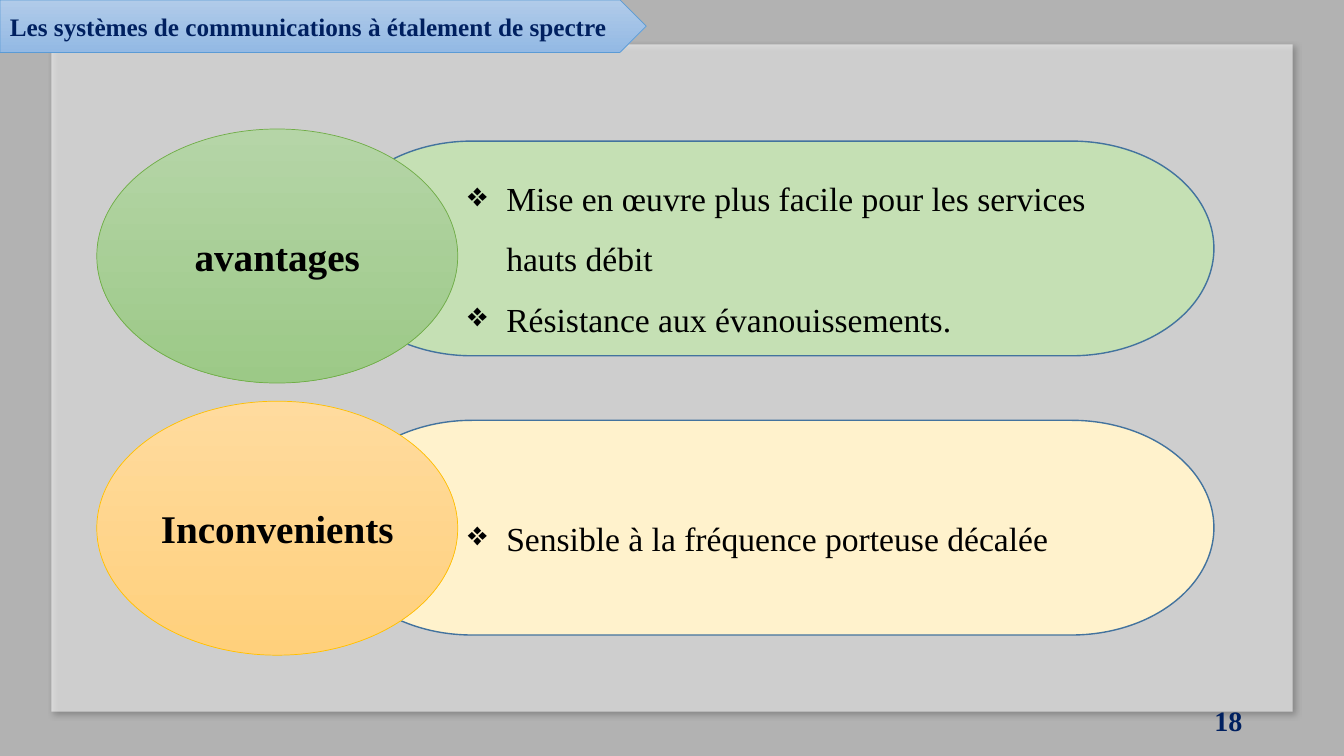
"""Build the slide on advantages and drawbacks of spread-spectrum systems."""
from lxml.etree import SubElement
from pptx import Presentation
from pptx.dml.color import RGBColor
from pptx.enum.shapes import MSO_SHAPE
from pptx.enum.text import MSO_ANCHOR, PP_ALIGN
from pptx.oxml.ns import qn
from pptx.util import Inches, Pt

FONT = "Times New Roman"
BLACK = RGBColor(0, 0, 0)
WHITE = RGBColor(0xFF, 0xFF, 0xFF)
NAVY = RGBColor(0x00, 0x20, 0x60)
BLUE = RGBColor(0x5B, 0x9B, 0xD5)
BLUE_FADE = RGBColor(0xB1, 0xCB, 0xE9), RGBColor(0x93, 0xB9, 0xE4)
STEEL = RGBColor(0x43, 0x73, 0x9E)
GREEN = RGBColor(0x70, 0xAD, 0x47)
GREEN_FADE = RGBColor(0xB5, 0xD5, 0xA7), RGBColor(0x9C, 0xC9, 0x87)
PALE_GREEN = RGBColor(0xC5, 0xE0, 0xB4)
GOLD = RGBColor(0xFF, 0xC0, 0x00)
GOLD_FADE = RGBColor(0xFF, 0xDB, 0x9E), RGBColor(0xFF, 0xD0, 0x7C)
PALE_GOLD = RGBColor(0xFF, 0xF2, 0xCC)

TITLE = "Les systèmes de communications à étalement de spectre"
NUMBER = "18"
GROUPS = [
    ("avantages", 1.28, 1.4, GREEN_FADE, GREEN, PALE_GREEN,
     ["Mise en œuvre plus facile pour les services hauts débit",
      "Résistance aux évanouissements."]),
    ("Inconvenients", 3.98, 4.17, GOLD_FADE, GOLD, PALE_GOLD,
     ["Sensible à la fréquence porteuse décalée"]),
]
WIDTH, HEIGHT = 13.33, 7.5
OVAL_LEFT, OVAL_W, OVAL_H = 0.96, 3.58, 2.52
BAND_LEFT, BAND_W, BAND_H = 3.27, 8.77, 2.13


def add_box(s, kind, box, fill, line=None, weight=0.5, alpha=None):
    sp = s.shapes.add_shape(kind, *map(Inches, box))
    sp.shadow.inherit = False
    if isinstance(fill, RGBColor):
        sp.fill.solid()
        sp.fill.fore_color.rgb = fill
    else:
        sp.fill.gradient()
        sp.fill.gradient_angle = 270
        for stop, color in zip(sp.fill.gradient_stops, fill):
            stop.color.rgb = color
    if alpha:
        color = sp.element.spPr.find(qn("a:solidFill"))[0]
        SubElement(color, qn("a:alpha"), val=str(alpha * 1000))
    if line is None:
        sp.line.fill.background()
    else:
        sp.line.color.rgb = line
        sp.line.width = Pt(weight)
    return sp


def add_shadow(sp):
    effects = sp.element.spPr.find(qn("a:effectLst"))
    shadow = SubElement(effects, qn("a:outerShdw"), blurRad=str(Pt(4)), dist=str(Pt(3)),
                        dir=str(45 * 60000), algn="tl", rotWithShape="0")
    color = SubElement(shadow, qn("a:srgbClr"), val=str(BLACK))
    SubElement(color, qn("a:alpha"), val="40000")


def write(sp, lines, size, color=BLACK, bold=False, align=PP_ALIGN.LEFT, bullet=None):
    tf = sp.text_frame
    tf.word_wrap = True
    tf.vertical_anchor = MSO_ANCHOR.MIDDLE
    for i, line in enumerate(lines):
        p = tf.add_paragraph() if i else tf.paragraphs[0]
        p.alignment = align
        if bullet:
            p.level = 1
            p.line_spacing = 1.5
            pPr = p._p.get_or_add_pPr()
            pPr.set("marL", str(Inches(1.24)))
            pPr.set("indent", str(Inches(-0.38)))
            SubElement(pPr, qn("a:buChar"), char=bullet)
        r = p.add_run()
        r.text = line
        r.font.name, r.font.size, r.font.bold = FONT, Pt(size), bold
        r.font.color.rgb = color


def main():
    prs = Presentation()
    prs.slide_width, prs.slide_height = Inches(WIDTH), Inches(HEIGHT)
    s = prs.slides.add_slide(prs.slide_layouts[6])
    add_box(s, MSO_SHAPE.RECTANGLE, (0, 0, WIDTH, HEIGHT), BLACK, alpha=30)
    add_shadow(add_box(s, MSO_SHAPE.RECTANGLE, (0.51, 0.44, 12.31, 6.62), WHITE, alpha=59))
    banner = add_box(s, MSO_SHAPE.PENTAGON, (0, 0, 6.41, 0.52), BLUE_FADE, BLUE)
    write(banner, [TITLE], 18, NAVY, True)
    for name, oval_top, band_top, fade, edge, pale, points in GROUPS:
        band = add_box(s, MSO_SHAPE.FLOWCHART_TERMINATOR,
                       (BAND_LEFT, band_top, BAND_W, BAND_H), pale, STEEL, 1)
        write(band, points, 24, bullet="❖")
        oval = add_box(s, MSO_SHAPE.OVAL, (OVAL_LEFT, oval_top, OVAL_W, OVAL_H), fade, edge)
        write(oval, [name], 28, bold=True, align=PP_ALIGN.CENTER)
    number = s.shapes.add_textbox(*map(Inches, (9.42, 6.95, 3, 0.4)))
    write(number, [NUMBER], 20, NAVY, True, PP_ALIGN.RIGHT)
    prs.save("out.pptx")


if __name__ == "__main__":
    main()
